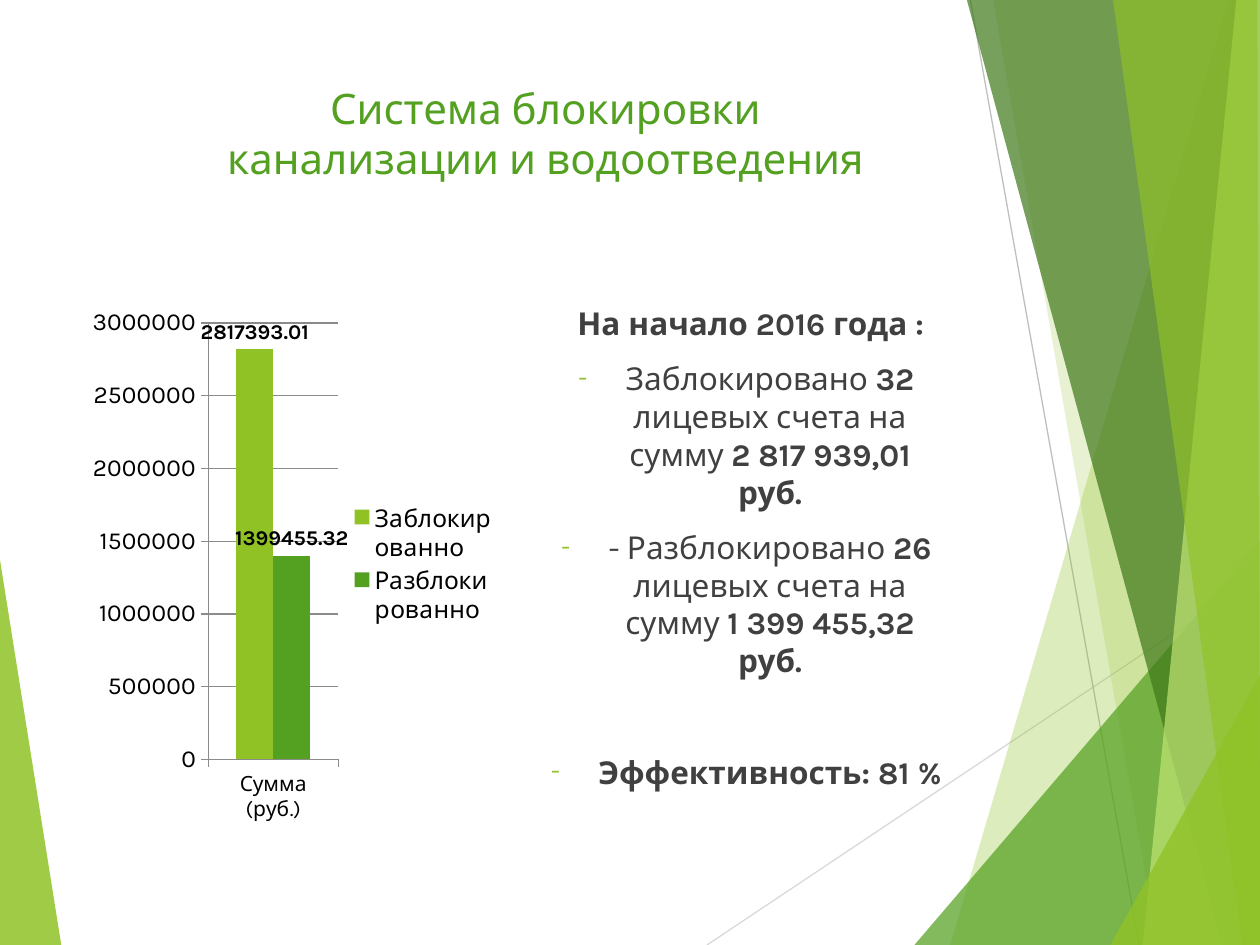
from collections import namedtuple

from lxml import etree
from pptx import Presentation
from pptx.chart.data import CategoryChartData
from pptx.dml.color import RGBColor
from pptx.enum.chart import XL_CHART_TYPE, XL_LEGEND_POSITION, XL_TICK_MARK
from pptx.enum.shapes import MSO_CONNECTOR
from pptx.enum.text import MSO_ANCHOR, MSO_AUTO_SIZE, PP_ALIGN
from pptx.oxml.ns import qn
from pptx.util import Pt

COLUMNS = XL_CHART_TYPE.COLUMN_CLUSTERED
RIGHT = XL_LEGEND_POSITION.RIGHT
TICK_OUT = XL_TICK_MARK.OUTSIDE
STRAIGHT = MSO_CONNECTOR.STRAIGHT
TOP = MSO_ANCHOR.TOP
NO_FIT = MSO_AUTO_SIZE.NONE
CENTER = PP_ALIGN.CENTER

FONT = "Karla"
LIME = RGBColor(0x90, 0xC2, 0x26)
GREEN = RGBColor(0x54, 0xA0, 0x21)
FOREST = RGBColor(0x3F, 0x78, 0x19)
PALE = RGBColor(0xC0, 0xE4, 0x74)
SILVER = RGBColor(0xD9, 0xD9, 0xD9)
GRAY = RGBColor(0xBF, 0xBF, 0xBF)
AXIS = RGBColor(0x8B, 0x8B, 0x8B)
INK = RGBColor(0x40, 0x40, 0x40)
BLACK = RGBColor(0, 0, 0)

Box = namedtuple("Box", "left top width height")
PAGE_BOX = Box(0, 0, 720, 540)
TITLE_BOX = Box(116.2, 43.3, 391, 75)
CHART_BOX = Box(48, 170.2, 243.5, 305.5)
BODY_BOX = Box(306, 170, 241, 305)

RAYS = [((404, 540), (720, 329), SILVER), ((554.5, 0), (651, 540), GRAY)]
FACETS = [
    ([(0, 320), (35, 540), (0, 540)], LIME, 85),
    ([(702, 0), (543, 540), (720, 540), (720, 0)], LIME, 30),
    ([(567.5, 0), (661.5, 540), (720, 540), (720, 0)], LIME, 20),
    ([(522.5, 540), (720, 309), (720, 540)], GREEN, 72),
    ([(552.5, 0), (698.5, 540), (720, 540), (720, 0)], FOREST, 70),
    ([(706.5, 0), (653, 540), (720, 540), (720, 0)], PALE, 70),
    ([(636, 0), (710, 540), (720, 540), (718.5, 0)], LIME, 65),
    ([(634.5, 540), (720, 386), (720, 540)], LIME, 80),
]

HEADING = "На начало 2016 года :"
ITEMS = [
    ([("Заблокировано ", False), ("32", True), (" лицевых счета на сумму ", False),
      ("2 817 939,01 руб.", True)], 10),
    ([("- Разблокировано ", False), ("26", True), (" лицевых счета на сумму ", False),
      ("1 399 455,32 руб.", True)], 10),
    ([("Эффективность: 81 %", True)], 42),
]
SERIES = [("Заблокированно", 2817393.01, LIME),
          ("Разблокированно", 1399455.32, GREEN)]


def set_font(font, size, color, bold=False):
    """Apply the slide's typeface with a size, colour and weight."""
    font.name, font.size, font.bold = FONT, Pt(size), bold
    font.color.rgb = color


def place(shape, box):
    """Move a placeholder into a box and fix its top-anchored frame."""
    shape.left, shape.top, shape.width, shape.height = map(Pt, box)
    frame = shape.text_frame
    frame.word_wrap, frame.auto_size, frame.vertical_anchor = True, NO_FIT, TOP
    return frame


def add_facets(page, box):
    """Draw the thin rays and translucent green facets in a box."""
    def spot(point):
        return Pt(box.left + point[0]), Pt(box.top + point[1])

    for start, end, color in RAYS:
        ray = page.shapes.add_connector(STRAIGHT, *spot(start), *spot(end))
        ray.line.color.rgb, ray.line.width = color, Pt(0.75)
        etree.SubElement(ray._element.spPr, qn("a:effectLst"))
    for points, color, alpha in FACETS:
        corners = [spot(point) for point in points]
        builder = page.shapes.build_freeform(*corners[0])
        builder.add_line_segments(corners[1:], close=True)
        facet = builder.convert_to_shape()
        facet.shadow.inherit = False
        facet.line.fill.background()
        facet.fill.solid()
        facet.fill.fore_color.rgb = color
        tint = facet._element.spPr.find(".//" + qn("a:srgbClr"))
        etree.SubElement(tint, qn("a:alpha"), val=str(alpha * 1000))


def fill_title(page, box):
    """Write the two-line title in a box."""
    para = place(page.shapes.title, box).paragraphs[0]
    para.alignment = CENTER
    set_font(para.font, 24, GREEN)
    para.add_run().text = "Система блокировки"
    para.add_line_break()
    para.add_run().text = "канализации и водоотведения"


def set_bullet(para, margin, dash):
    """Set a paragraph's indent and its lime dash, or no bullet."""
    props = para._p.get_or_add_pPr()
    props.set("marL", str(Pt(margin)))
    props.set("indent", str(-Pt(margin) if dash else 0))
    if not dash:
        etree.SubElement(props, qn("a:buNone"))
        return
    color = etree.SubElement(props, qn("a:buClr"))
    etree.SubElement(color, qn("a:srgbClr"), val=str(LIME))
    etree.SubElement(props, qn("a:buSzPct"), val="80000")
    etree.SubElement(props, qn("a:buFont"), typeface=FONT)
    etree.SubElement(props, qn("a:buChar"), char="-")


def fill_body(page, box):
    """Write the heading and the dashed list in a box."""
    frame = place(page.placeholders[1], box)
    for index, (spans, gap) in enumerate([([(HEADING, True)], 10)] + ITEMS):
        para = frame.paragraphs[0] if index == 0 else frame.add_paragraph()
        para.alignment, para.space_before = CENTER, Pt(gap)
        set_bullet(para, 27 if index else 5, index > 0)
        set_font(para.font, 18, INK)
        for text, bold in spans:
            span = para.add_run()
            span.text = text
            set_font(span.font, 18, INK, bold)


def add_sums_chart(page, box):
    """Add the column chart of blocked and unblocked sums in a box."""
    data = CategoryChartData()
    data.categories = ["Сумма (руб.)"]
    for name, value, _ in SERIES:
        data.add_series(name, [value])
    chart = page.shapes.add_chart(COLUMNS, *map(Pt, box), data).chart
    set_font(chart.font, 18, BLACK)
    chart.has_title = False
    chart.has_legend = True
    chart.legend.position, chart.legend.include_in_layout = RIGHT, False
    set_font(chart.legend.font, 14, BLACK)
    for axis, size in ((chart.category_axis, 12), (chart.value_axis, 14)):
        axis.major_tick_mark = TICK_OUT
        axis.format.line.color.rgb = AXIS
        set_font(axis.tick_labels.font, size, BLACK)
    chart.value_axis.major_gridlines.format.line.color.rgb = AXIS
    plot = chart.plots[0]
    plot.gap_width, plot.overlap, plot.vary_by_categories = 150, 0, False
    for series, (_, _, color) in zip(plot.series, SERIES):
        series.format.fill.solid()
        series.format.fill.fore_color.rgb = color
        labels = series.data_labels
        labels.show_value = True
        set_font(labels.font, 12, BLACK, True)


def main():
    """Build the one-slide deck and save it."""
    deck = Presentation()
    deck.slide_width, deck.slide_height = Pt(PAGE_BOX.width), Pt(PAGE_BOX.height)
    page = deck.slides.add_slide(deck.slide_layouts[1])
    add_facets(page, PAGE_BOX)
    fill_title(page, TITLE_BOX)
    add_sums_chart(page, CHART_BOX)
    fill_body(page, BODY_BOX)
    deck.save("out.pptx")


if __name__ == "__main__":
    main()
